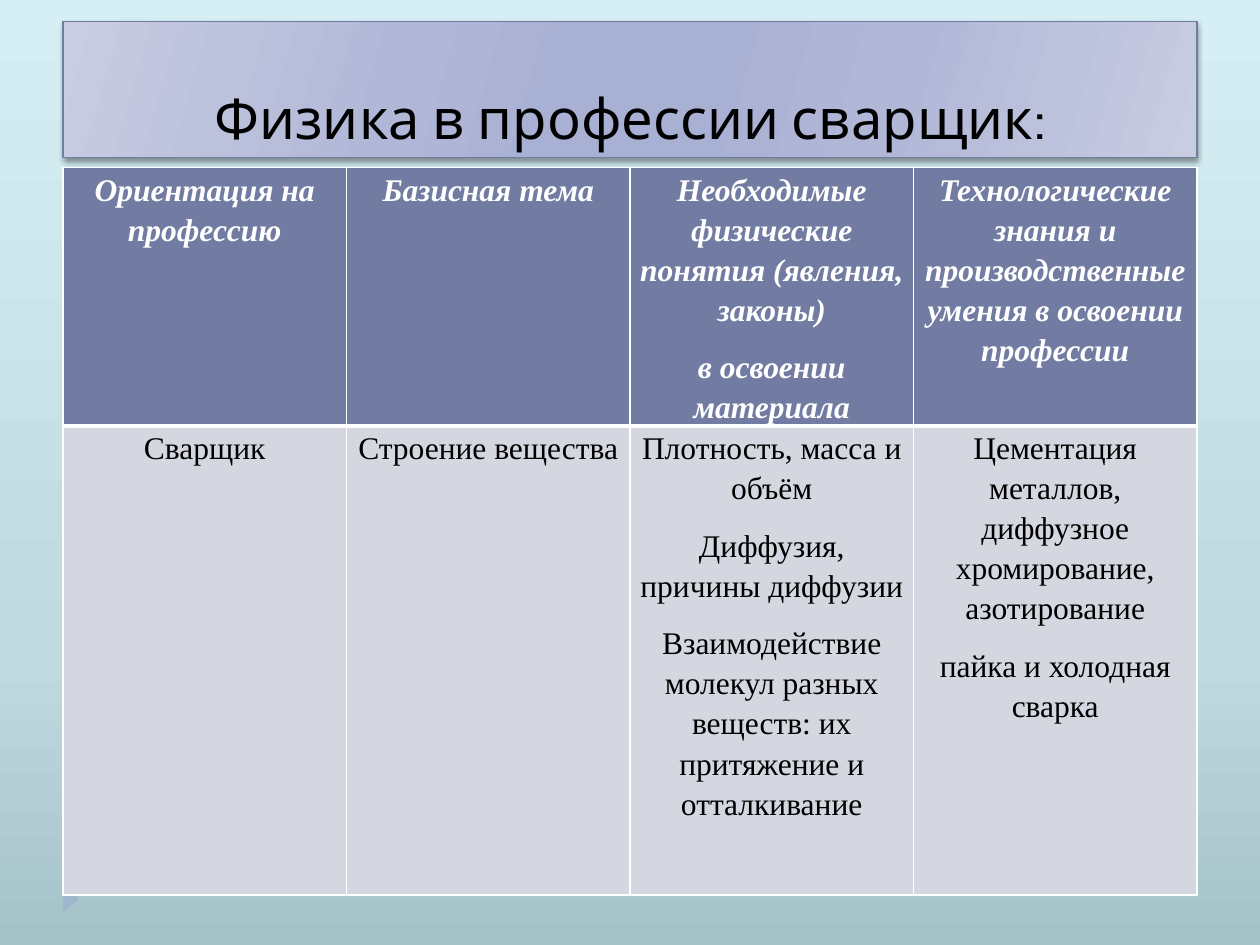
"""Build the slide on physics in the welder's profession."""
from dataclasses import dataclass

import pptx
import pptx.dml.color
import pptx.enum.shapes
import pptx.enum.text
import pptx.oxml
import pptx.oxml.ns
import pptx.util
from lxml import etree
from pptx.util import Cm, Pt

BLACK, WHITE = "000000", "FFFFFF"
HEADER, BODY, ACCENT = "727CA3", "D5D7E0", "9FB8CD"
LEFT, WIDTH = Cm(1.27), Cm(22.86)
SKY = [(0, "A5C2C9"), (30, "C0D9DF"), (100, "D5EFF5")]
SHEEN = [(0, "C9CDE2"), (30, "B1B7D7"), (45, "A8B0D3"),
         (55, "A8B0D3"), (73, "B1B7D7"), (100, "C9CDE2")]


@dataclass
class Topic:
    heading: list[str]
    content: list[str]


@dataclass
class RowStyle:
    fill: str
    text: str
    emphasis: bool
    borders: dict[str, float]


TOPICS = [
    Topic(["Ориентация на профессию"], ["Сварщик"]),
    Topic(["Базисная тема"], ["Строение вещества"]),
    Topic(["Необходимые физические понятия (явления, законы)",
           "в освоении материала"],
          ["Плотность, масса и объём", "Диффузия, причины диффузии",
           "Взаимодействие молекул разных веществ: их притяжение и отталкивание"]),
    Topic(["Технологические знания и производственные умения в освоении профессии"],
          ["Цементация металлов, диффузное хромирование, азотирование",
           "пайка и холодная сварка"]),
]
HEADING_STYLE = RowStyle(HEADER, WHITE, True, {"L": 1, "R": 1, "T": 1, "B": 3})
CONTENT_STYLE = RowStyle(BODY, BLACK, False, {"L": 1, "R": 1, "T": 3, "B": 1})


def rgb(value: str) -> pptx.dml.color.RGBColor:
    return pptx.dml.color.RGBColor.from_string(value)


def add_node(parent, tag: str, **attributes):
    node = etree.SubElement(parent, pptx.oxml.ns.qn(tag))
    for key, value in attributes.items():
        node.set(key, str(value))
    return node


def set_gradient(fill, owner, stops: list[tuple[int, str]], angle: float) -> None:
    fill.gradient()
    fill.gradient_angle = angle
    stop_list = next(owner.iter(pptx.oxml.ns.qn("a:gsLst")))
    for old_stop in list(stop_list):
        stop_list.remove(old_stop)
    for position, color in stops:
        stop = add_node(stop_list, "a:gs", pos=position * 1000)
        add_node(stop, "a:srgbClr", val=color)


def add_title(slide, text: str) -> None:
    title = slide.shapes.title
    title.left, title.top, title.width, title.height = LEFT, Cm(0.43), WIDTH, Cm(2.74)
    set_gradient(title.fill, title.element, SHEEN, 344)
    title.line.color.rgb = rgb(HEADER)
    title.line.width = Pt(0.75)
    effects = add_node(title.element.spPr, "a:effectLst")
    shadow = add_node(effects, "a:outerShdw", blurRad=Pt(3), dist=Pt(2),
                      dir=90 * 60000, rotWithShape=0)
    add_node(add_node(shadow, "a:srgbClr", val=BLACK), "a:alpha", val=40000)
    frame = title.text_frame
    frame.text = text
    frame.auto_size = pptx.enum.text.MSO_AUTO_SIZE.NONE
    frame.vertical_anchor = pptx.enum.text.MSO_ANCHOR.BOTTOM
    paragraph = frame.paragraphs[0]
    paragraph.alignment = pptx.enum.text.PP_ALIGN.CENTER
    paragraph.font.name = "Cabin"
    paragraph.font.size = Pt(32)
    paragraph.font.color.rgb = rgb(BLACK)


def add_corner_marker(slide) -> None:
    marker = slide.shapes.add_shape(
        pptx.enum.shapes.MSO_SHAPE.ISOSCELES_TRIANGLE,
        Cm(1.17), Cm(17.96), Cm(0.53), Cm(0.33))
    marker.rotation = 90
    marker.shadow.inherit = False
    marker.fill.solid()
    marker.fill.fore_color.rgb = rgb(ACCENT)
    marker.line.fill.background()


def fill_cell(cell, lines: list[str], style: RowStyle) -> None:
    properties = cell._tc.get_or_add_tcPr()
    for side, width in style.borders.items():
        border = add_node(properties, f"a:ln{side}", w=Pt(width))
        add_node(add_node(border, "a:solidFill"), "a:srgbClr", val=WHITE)
    cell.fill.solid()
    cell.fill.fore_color.rgb = rgb(style.fill)
    cell.margin_left = cell.margin_right = Cm(0.18)
    cell.margin_top = cell.margin_bottom = 0
    cell.text = "\n".join(lines)
    for paragraph in cell.text_frame.paragraphs:
        paragraph.alignment = pptx.enum.text.PP_ALIGN.CENTER
        paragraph.line_spacing = 1.15
        paragraph.space_after = Pt(10)
        font = paragraph.font
        font.name, font.size = "Times New Roman", Pt(18)
        font.bold = font.italic = style.emphasis
        font.color.rgb = rgb(style.text)


def add_topics(slide, topics: list[Topic]) -> None:
    table = slide.shapes.add_table(
        2, len(topics), LEFT, Cm(3.38), WIDTH, Cm(14.66)).table
    table.rows[0].height, table.rows[1].height = Cm(5.21), Cm(9.45)
    for column, topic in enumerate(topics):
        fill_cell(table.cell(0, column), topic.heading, HEADING_STYLE)
        fill_cell(table.cell(1, column), topic.content, CONTENT_STYLE)


def main() -> None:
    presentation = pptx.Presentation()
    presentation.slide_width, presentation.slide_height = Cm(25.4), Cm(19.05)
    slide = presentation.slides.add_slide(presentation.slide_layouts[5])
    set_gradient(slide.background.fill, slide.element, SKY, 90)
    add_title(slide, "Физика в профессии сварщик:")
    add_corner_marker(slide)
    add_topics(slide, TOPICS)
    presentation.save("out.pptx")


if __name__ == "__main__":
    main()
